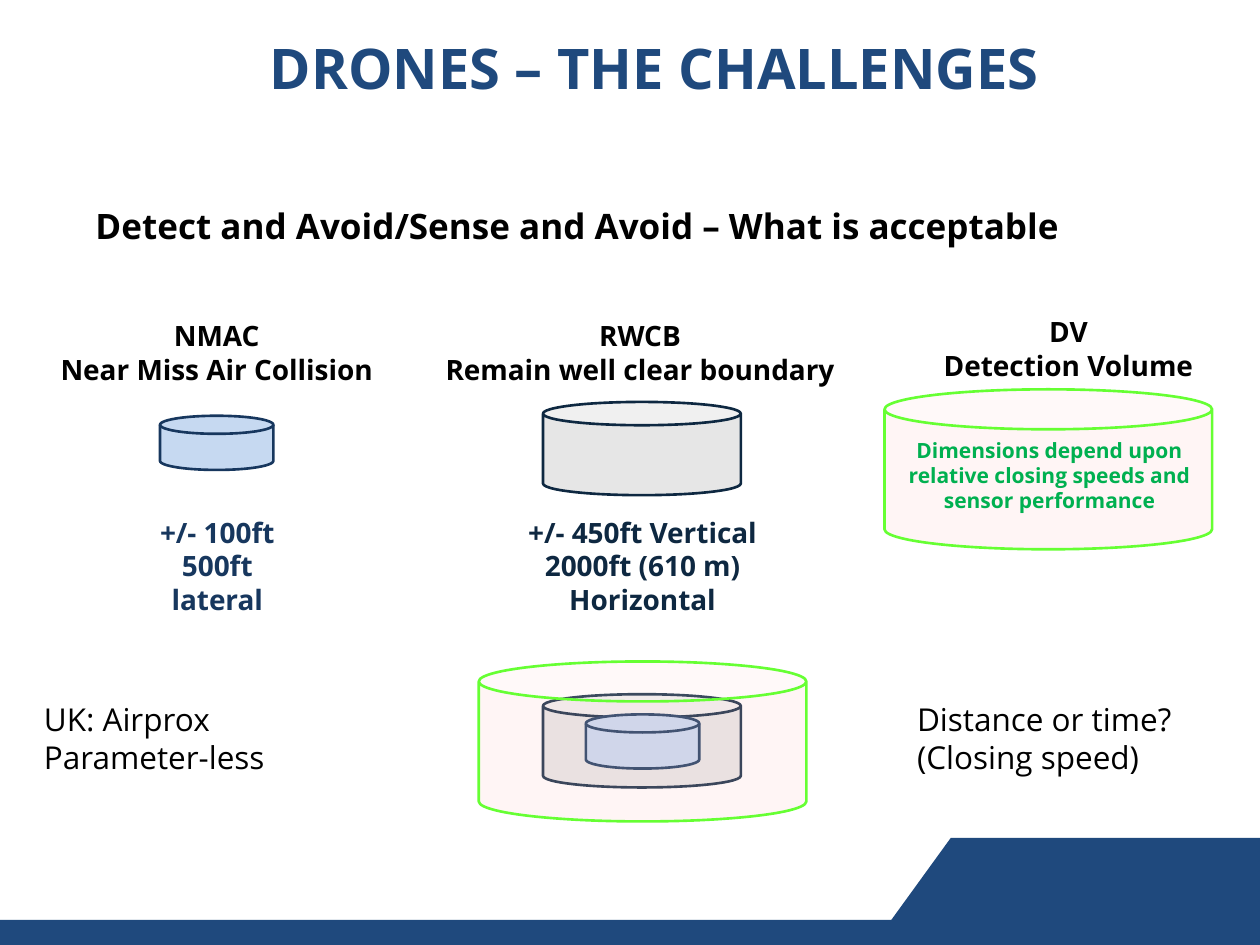
from lxml import etree
from pptx import Presentation
from pptx.dml.color import RGBColor
from pptx.enum.shapes import MSO_SHAPE
from pptx.enum.text import MSO_ANCHOR, MSO_AUTO_SIZE, PP_ALIGN
from pptx.oxml.ns import qn
from pptx.util import Pt

PX = 9144  # 100 px to the inch
LEFT, MID = PP_ALIGN.LEFT, PP_ALIGN.CENTER
CAN, DISK = MSO_SHAPE.CAN, MSO_SHAPE.FLOWCHART_MAGNETIC_DISK
RECT, SLANT = MSO_SHAPE.RECTANGLE, MSO_SHAPE.PARALLELOGRAM

BLUE = RGBColor(0x1F, 0x49, 0x7D)
NAVY = RGBColor(0x17, 0x37, 0x5E)
DARK = RGBColor(0x0E, 0x28, 0x41)
SKY = RGBColor(0xC6, 0xD9, 0xF1)
GREY = RGBColor(0xD2, 0xD2, 0xD2)
PINK = RGBColor(0xFF, 0xCC, 0xCC)
LIME = RGBColor(0x66, 0xFF, 0x33)
GREEN = RGBColor(0x00, 0xB0, 0x50)
BLACK = RGBColor(0, 0, 0)

prs = Presentation()
prs.slide_width, prs.slide_height = 1000 * PX, 750 * PX
slide = prs.slides.add_slide(prs.slide_layouts[5])


def draw(shapes, kind, box, fill, line=None, alpha=100):
    """Add a filled shape, with an outline if a line colour is given."""
    shape = shapes.add_shape(kind, *[n * PX for n in box])
    shape.shadow.inherit = False
    shape.fill.solid()
    shape.fill.fore_color.rgb = fill
    if alpha < 100:
        tint = shape._element.spPr.find(qn("a:solidFill"))[0]
        etree.SubElement(tint, qn("a:alpha")).set("val", str(alpha * 1000))
    if line is None:
        shape.line.fill.background()
    else:
        shape.line.color.rgb = line
        shape.line.width = Pt(1.5)
    return shape


def write(frame, lines, size, color, bold=True, align=MID):
    """Fill a text frame with one paragraph a line."""
    frame.word_wrap = True
    frame.text = "\n".join(lines)
    look = {"name": "Open Sans", "size": Pt(size), "bold": bold}
    for para in frame.paragraphs:
        para.alignment = align
        font = para.runs[0].font
        for key, val in look.items():
            setattr(font, key, val)
        font.color.rgb = color


# Footer band
draw(slide.shapes, RECT, (0, 730, 719, 20), BLUE)
slant = draw(slide.shapes, SLANT, (693, 665, 377, 85), BLUE)
slant.adjustments[0] = 0.725

# Volumes: kind, width, height, fill, line, opacity
near = (DISK, 90, 43, SKY, NAVY, 100)
clear = (CAN, 157, 74, GREY, DARK, 55)
detect = (CAN, 260, 127, PINK, LIME, 19)

# One volume in each column, then all three nested in a group
nest = slide.shapes.add_group_shape()
places = [
    (slide.shapes, near, 127, 330),
    (slide.shapes, clear, 431, 319),
    (slide.shapes, detect, 702, 309),
    (nest.shapes, clear, 431, 551),
    (nest.shapes, near, 465, 567),
    (nest.shapes, detect, 380, 525),
]
for shapes, (kind, wide, high, fill, line, alpha), x, y in places:
    draw(shapes, kind, (x, y, wide, high), fill, line, alpha)

# Texts: box, lines, size, colour, bold, alignment
texts = [
    ((66, 157, 886, 44), ["Detect and Avoid/Sense and Avoid – What is acceptable"],
     20, BLACK, True, LEFT),
    ((-34, 248, 412, 94), ["NMAC", "Near Miss Air Collision"], 16, BLACK, True, MID),
    ((328, 248, 360, 64), ["RWCB", "Remain well clear boundary"], 16, BLACK, True, MID),
    ((668, 245, 360, 64), ["DV", "Detection Volume"], 16, BLACK, True, MID),
    ((104, 404, 137, 91), ["+/- 100ft", "500ft lateral"], 16, NAVY, True, MID),
    ((370, 404, 280, 91), ["+/- 450ft Vertical", "2000ft (610 m) Horizontal"],
     16, DARK, True, MID),
    ((703, 342, 260, 71),
     ["Dimensions depend upon relative closing speeds and sensor performance"],
     12, GREEN, True, MID),
    ((25, 551, 280, 71), ["UK: Airprox", "Parameter-less"], 18, BLACK, False, LEFT),
    ((718, 551, 260, 71), ["Distance or time?", "(Closing speed)"],
     18, BLACK, False, LEFT),
]
for box, *rest in texts:
    area = slide.shapes.add_textbox(*[n * PX for n in box])
    write(area.text_frame, *rest)

# Title
title = slide.shapes.title
spot = {"left": 204, "top": 14, "width": 862, "height": 92}
for key, val in spot.items():
    setattr(title, key, val * PX)
frame = title.text_frame
write(frame, ["DRONES – THE CHALLENGES"], 32, BLUE, align=LEFT)
frame.auto_size = MSO_AUTO_SIZE.NONE
frame.vertical_anchor = MSO_ANCHOR.MIDDLE
frame.paragraphs[0].line_spacing = 0.7

prs.save("out.pptx")
